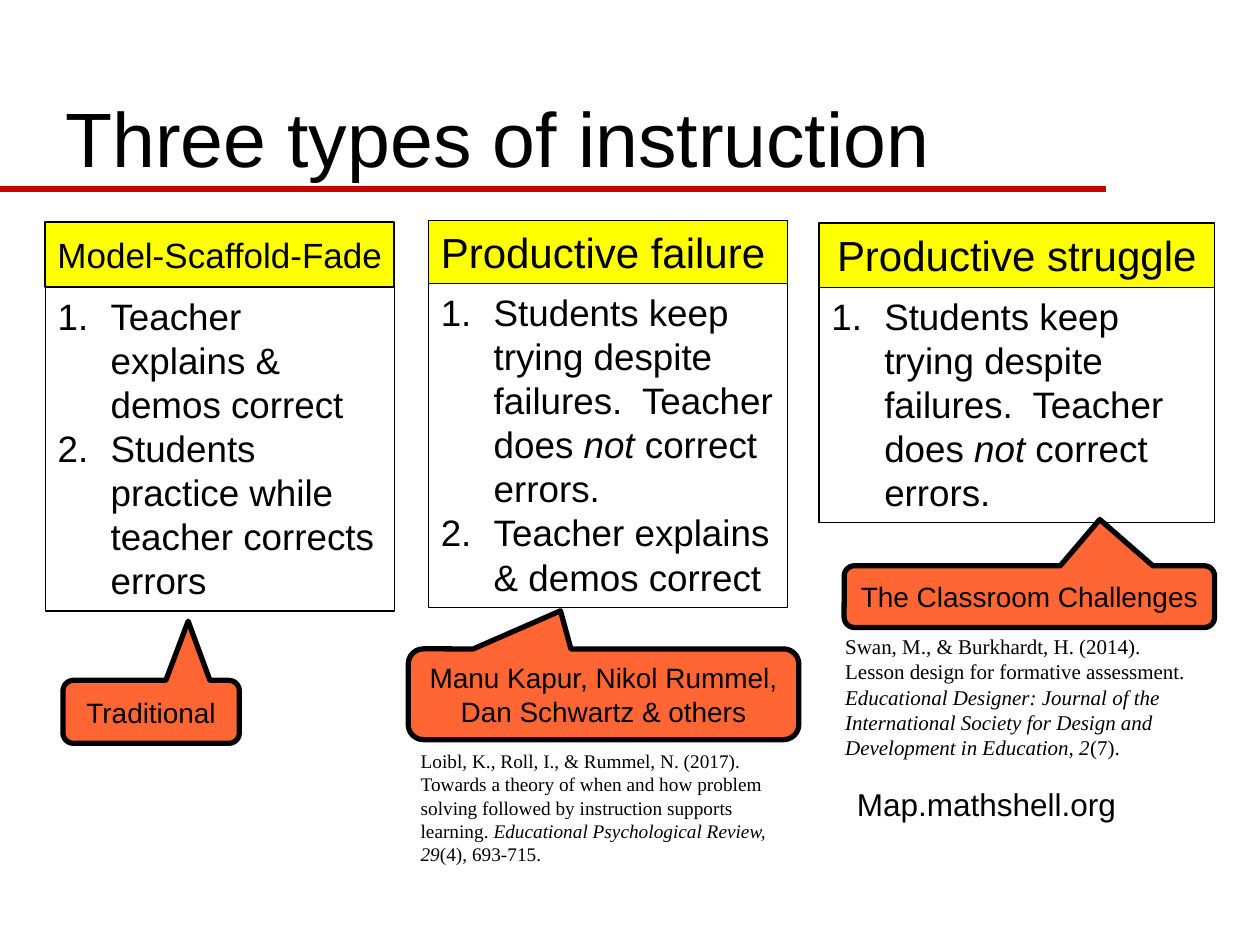
from pptx import Presentation
from pptx.dml.color import RGBColor
from pptx.enum.shapes import MSO_CONNECTOR, MSO_SHAPE
from pptx.enum.text import MSO_ANCHOR, PP_ALIGN
from pptx.oxml.ns import qn
from pptx.util import Inches, Pt
from lxml.etree import SubElement

THEME = {
    "ink": RGBColor.from_string("000000"),
    "rule": RGBColor.from_string("CC0000"),
    "heading": RGBColor.from_string("FFFF00"),
    "callout": RGBColor.from_string("FF6633"),
    "sans": "Arial",
    "serif": "Times New Roman",
    "title": 44,
    "steps": 21,
    "label": 16,
    "link": 18,
}

deck = Presentation()
deck.slide_width, deck.slide_height = Inches(10), Inches(7.5)
COLUMN, ROW = deck.slide_width / 100, deck.slide_height / 75
slide = deck.slides.add_slide(deck.slide_layouts[6])


def write(text, *, at, size, font=THEME["sans"], kind=None, fill=None, line=0.75,
          align=PP_ALIGN.LEFT, anchor=MSO_ANCHOR.TOP, wrap=True, numbered=False):
    left, top, width, height = at
    box = [round(v) for v in (left * COLUMN, top * ROW, width * COLUMN, height * ROW)]
    if kind is None:
        holder = slide.shapes.add_textbox(*box)
    else:
        holder = slide.shapes.add_shape(kind, *box)
        holder.shadow.inherit = False
        holder.line.color.rgb = THEME["ink"]
        holder.line.width = Pt(line)
        if fill is None:
            holder.fill.background()
        else:
            holder.fill.solid()
            holder.fill.fore_color.rgb = fill
    frame = holder.text_frame
    frame.word_wrap = wrap
    frame.vertical_anchor = anchor
    for index, content in enumerate(text.split("\n")):
        paragraph = frame.add_paragraph() if index else frame.paragraphs[0]
        paragraph.alignment = align
        if numbered:
            properties = paragraph._p.get_or_add_pPr()
            indent = Inches(0.42)
            properties.set("marL", str(indent))
            properties.set("indent", str(-indent))
            SubElement(properties, qn("a:buFont"), typeface="+mj-lt")
            SubElement(properties, qn("a:buAutoNum"), type="arabicPeriod")
        for part, words in enumerate(content.split("*")):
            run = paragraph.add_run()
            run.text = words
            run.font.name = font
            run.font.size = Pt(size)
            run.font.color.rgb = THEME["ink"]
            run.font.italic = part % 2 == 1
    return holder


rule_y = round(15 * ROW)
title_rule = slide.shapes.add_connector(
    MSO_CONNECTOR.STRAIGHT, 0, rule_y, round(87.8 * COLUMN), rule_y)
title_rule.line.color.rgb = THEME["rule"]
title_rule.line.width = Pt(4)
SubElement(title_rule._element.spPr, qn("a:effectLst"))

write("Three types of instruction", at=(4.2, 2.9, 85, 12.1),
      size=THEME["title"], anchor=MSO_ANCHOR.BOTTOM)

keep_trying = ("Students keep trying despite failures.  Teacher does "
               "*not* correct errors.")
approaches = [
    ("Model-Scaffold-Fade", 3.6, 27.7, 17.6, 22.8, 48.5, 20, 1, PP_ALIGN.CENTER,
     "Teacher explains & demos correct\n"
     "Students practice while teacher corrects errors"),
    ("Productive failure", 34, 28.5, 17.5, 22.5, 48.2, 24, 0.75, PP_ALIGN.LEFT,
     keep_trying + "\nTeacher explains & demos correct"),
    ("Productive struggle", 65, 31.4, 17.7, 22.8, 41.5, 24, 0.75, PP_ALIGN.CENTER,
     keep_trying),
]
for name, left, width, top, split, bottom, size, line, align, steps in approaches:
    write(steps, at=(left, split, width, bottom - split), size=THEME["steps"],
          kind=MSO_SHAPE.RECTANGLE, numbered=True)
    write(name, at=(left, top, width, split - top), size=size,
          kind=MSO_SHAPE.RECTANGLE, fill=THEME["heading"], line=line, align=align,
          anchor=MSO_ANCHOR.MIDDLE, wrap=False)

examples = [
    ("Traditional", (5, 54, 14, 5), (0.21, -1.44)),
    ("Manu Kapur, Nikol Rummel,\nDan Schwartz & others",
     (32.4, 51.5, 31, 7.2), (-0.11, -0.92)),
    ("The Classroom Challenges", (67, 44.9, 29.4, 4.9), (0.19, -1.25)),
]
for people, place, pointer in examples:
    callout = write(people, at=place, size=THEME["label"],
                    kind=MSO_SHAPE.ROUNDED_RECTANGULAR_CALLOUT,
                    fill=THEME["callout"], line=3, align=PP_ALIGN.CENTER,
                    anchor=MSO_ANCHOR.MIDDLE, wrap=False)
    callout.adjustments[0], callout.adjustments[1] = pointer

references = [
    ("Loibl, K., Roll, I., & Rummel, N. (2017). Towards a theory of when and how "
     "problem solving followed by instruction supports learning. "
     "*Educational Psychological Review, 29*(4), 693-715.",
     (32.4, 59, 31, 10.3), 11),
    ("Swan, M., & Burkhardt, H. (2014). Lesson design for formative assessment. "
     "*Educational Designer: Journal of the International Society for Design and "
     "Development in Education, 2*(7).",
     (66.1, 49.8, 30, 11.1), 12),
]
for citation, place, size in references:
    write(citation, at=place, size=size, font=THEME["serif"])

write("Map.mathshell.org", at=(66.3, 61.8, 24, 4), size=THEME["link"],
      align=PP_ALIGN.CENTER)

deck.save("out.pptx")
